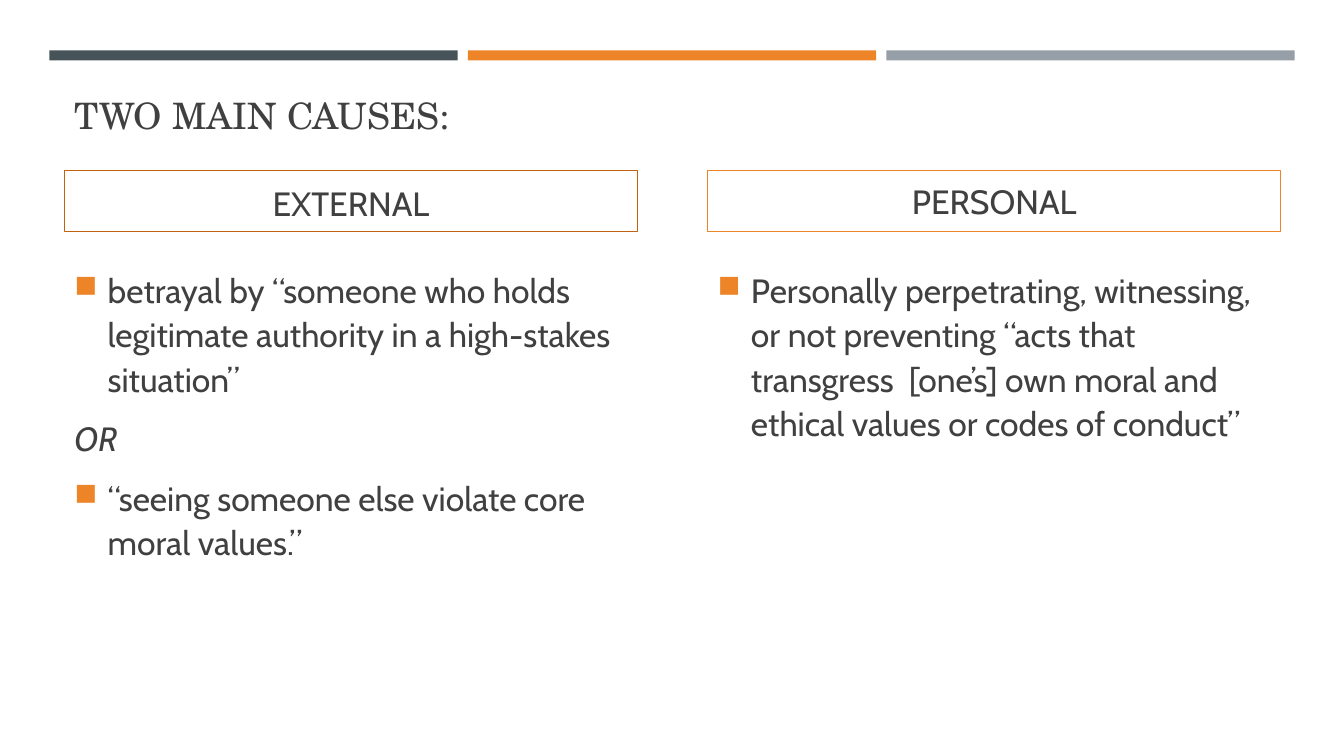
import pptx
import pptx.util
import pptx.dml.color
import pptx.enum.shapes
import pptx.enum.text
import pptx.oxml
import pptx.oxml.ns

Inches = pptx.util.Inches
Pt = pptx.util.Pt
Align = pptx.enum.text.PP_ALIGN
Anchor = pptx.enum.text.MSO_ANCHOR
RECT = pptx.enum.shapes.MSO_SHAPE.RECTANGLE
INK = "404040"
ORANGE = "ED8428"


def color(text):
    """Turn a hex string into a colour."""
    return pptx.dml.color.RGBColor.from_string(text)


def rect(slide, box, fill=None, line=None):
    """Add a flat rectangle with an optional fill and outline."""
    shape = slide.shapes.add_shape(RECT, *map(Inches, box))
    shape.shadow.inherit = False
    if fill:
        shape.fill.solid()
        shape.fill.fore_color.rgb = color(fill)
    else:
        shape.fill.background()
    if line:
        shape.line.color.rgb = color(line)
        shape.line.width = Pt(0.75)
    else:
        shape.line.fill.background()
    return shape


def write(para, text, size=24, font="Cabin", slant=False):
    """Add one run to a paragraph."""
    run = para.add_run()
    run.text = text
    run.font.size = Pt(size)
    run.font.name = font
    run.font.italic = slant
    run.font.color.rgb = color(INK)


def space(para, lead=1.1):
    """Set the line and paragraph spacing of body text."""
    para.line_spacing = lead
    para.space_before = Pt(4.8)
    para.space_after = Pt(6)


def bullet(para):
    """Give a paragraph a hanging square bullet."""
    props = para._p.get_or_add_pPr()
    props.set("marL", str(Inches(0.33)))
    props.set("indent", str(-Inches(0.33)))
    space = pptx.oxml.ns.nsdecls("a")
    for part in (
        f'<a:buClr {space}><a:srgbClr val="{ORANGE}"/></a:buClr>',
        f'<a:buSzPct {space} val="92000"/>',
        f'<a:buChar {space} char="■"/>',
    ):
        props.append(pptx.oxml.parse_xml(part))


def frame(slide, box, anchor):
    """Add a wrapping text box and return its text frame."""
    body = slide.shapes.add_textbox(*map(Inches, box)).text_frame
    body.word_wrap = True
    body.vertical_anchor = anchor
    return body


def bars(slide, box):
    """Split the box into three coloured bars with equal gaps."""
    left, top, width, height = box
    gap = 0.1
    part = (width - 2 * gap) / 3
    for i, fill in enumerate(("465359", ORANGE, "969FA7")):
        rect(slide, (left + i * (part + gap), top, part, height), fill)


def title(slide, box, text):
    """Write the slide title at the foot of its box."""
    body = frame(slide, box, Anchor.BOTTOM)
    write(body.paragraphs[0], text, 26, "TeX Gyre Schola")


def cause(slide, box, head, line, lead, items):
    """Place a framed heading with its list of points below."""
    left, top, width, height = box
    label = rect(slide, (left, top, width, 0.61), line=line).text_frame
    label.word_wrap = True
    label.vertical_anchor = Anchor.MIDDLE
    para = label.paragraphs[0]
    para.alignment = Align.CENTER
    space(para, lead)
    write(para, head)

    body = frame(slide, (left, top + 0.9, width, height - 0.9), Anchor.TOP)
    for i, (text, point) in enumerate(items):
        para = body.add_paragraph() if i else body.paragraphs[0]
        space(para)
        if point:
            bullet(para)
        write(para, text, slant=not point)


def main():
    """Build and save the slide."""
    deck = pptx.Presentation()
    deck.slide_width = Inches(13.33)
    deck.slide_height = Inches(7.5)
    slide = deck.slides.add_slide(deck.slide_layouts[6])
    bars(slide, (0.49, 0.5, 12.35, 0.1))
    title(slide, (0.64, 0.8, 12.06, 0.61), "TWO MAIN CAUSES:")
    cause(slide, (0.64, 1.69, 5.68, 4.72), "EXTERNAL", "C06210", 1.1, [
        ("betrayal by “someone who holds legitimate authority "
         "in a high-stakes situation”", True),
        ("OR", False),
        ("“seeing someone else violate core moral values.”", True),
    ])
    cause(slide, (7.02, 1.69, 5.68, 4.72), "PERSONAL", ORANGE, 1.0, [
        ("Personally perpetrating, witnessing, or not preventing “acts that "
         "transgress  [one’s] own moral and ethical values or codes of "
         "conduct”", True),
    ])
    deck.save("out.pptx")


if __name__ == "__main__":
    main()
